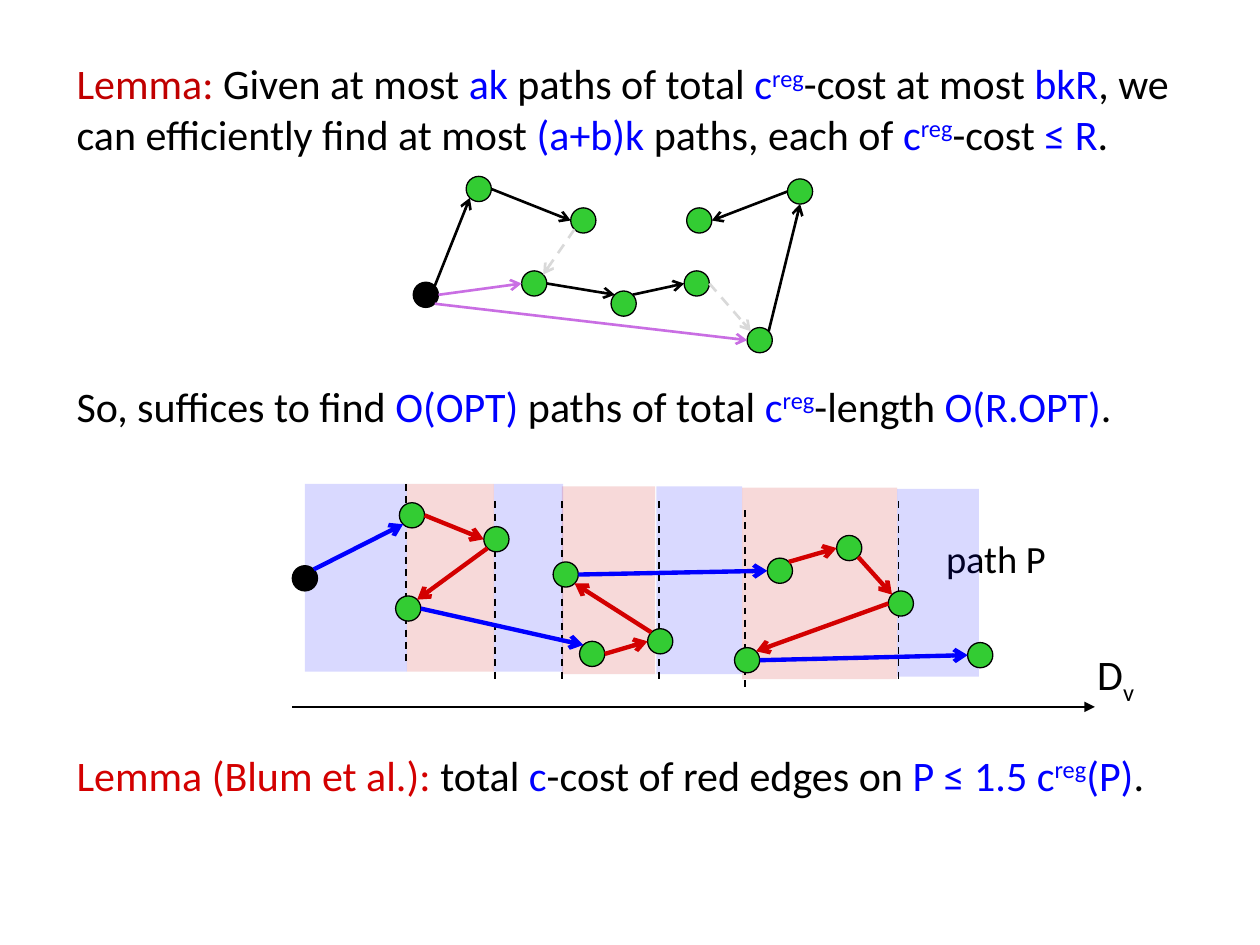
import dataclasses
import math

import lxml.etree
import pptx
import pptx.dml.color
import pptx.enum.dml
import pptx.enum.shapes
import pptx.enum.text
import pptx.oxml.ns
import pptx.util

Inches = pptx.util.Inches


@dataclasses.dataclass(frozen=True)
class Theme:
    font: str = "Calibri"
    body: int = 24
    label: int = 22
    black: str = "000000"
    blue: str = "0000FF"
    red: str = "D30000"
    lemma: str = "C00000"
    rose: str = "CC0000"
    green: str = "33CC33"
    gray: str = "D9D9D9"
    violet: str = "C96EE3"
    tint: int = 15
    hair: float = 0.75
    thin: float = 1
    mid: float = 1.5
    thick: float = 2.5
    node: float = 0.2


SITES = {
    "e": 0, "se": 45, "s": 90, "sw": 135,
    "w": 180, "nw": 225, "n": 270, "ne": 315,
}


class Sketch:
    def __init__(self, slide, theme):
        self.slide = slide
        self.theme = theme

    def color(self, code):
        return pptx.dml.color.RGBColor.from_string(code)

    def child(self, parent, tag, **attrs):
        name = pptx.oxml.ns.qn(tag)
        return lxml.etree.SubElement(parent, name, **attrs)

    def text(self, box, runs, size=None, wrap=True):
        frame = self.slide.shapes.add_textbox(*map(Inches, box)).text_frame
        frame.word_wrap = wrap
        frame.auto_size = pptx.enum.text.MSO_AUTO_SIZE.SHAPE_TO_FIT_TEXT
        para = frame.paragraphs[0]
        para.font.name = self.theme.font
        para.font.size = pptx.util.Pt(size or self.theme.body)
        for words, code, *shift in runs:
            run = para.add_run()
            run.text = words
            run.font.color.rgb = self.color(code)
            if shift:
                run._r.get_or_add_rPr().set("baseline", str(shift[0] * 1000))

    def shape(self, kind, box, code):
        shape = self.slide.shapes.add_shape(kind, *map(Inches, box))
        shape.shadow.inherit = False
        shape.fill.solid()
        shape.fill.fore_color.rgb = self.color(code)
        return shape

    def band(self, box, code):
        kind = pptx.enum.shapes.MSO_SHAPE.RECTANGLE
        shape = self.shape(kind, box, code)
        shape.line.fill.background()
        paint = shape._element.spPr.find(".//" + pptx.oxml.ns.qn("a:srgbClr"))
        self.child(paint, "a:alpha", val=str(self.theme.tint * 1000))

    def node(self, left, top, code):
        size = self.theme.node
        kind = pptx.enum.shapes.MSO_SHAPE.OVAL
        shape = self.shape(kind, (left, top, size, size), code)
        shape.line.color.rgb = self.color(self.theme.black)
        shape.line.width = pptx.util.Pt(self.theme.hair)

    def line(self, start, end, code, width, head=None, dash=False):
        kind = pptx.enum.shapes.MSO_CONNECTOR.STRAIGHT
        line = self.slide.shapes.add_connector(
            kind, *map(Inches, (*start, *end)))
        line.line.color.rgb = self.color(code)
        line.line.width = pptx.util.Pt(width)
        if dash:
            line.line.dash_style = pptx.enum.dml.MSO_LINE.DASH
        if head:
            self.child(line.line._get_or_add_ln(), "a:tailEnd", type=head)
        self.child(line._element.spPr, "a:effectLst")

    def site(self, spot, side):
        half = self.theme.node / 2
        angle = math.radians(SITES[side])
        return (spot[0] + half + half * math.cos(angle),
                spot[1] + half + half * math.sin(angle))

    def graph(self, spots, edges, width):
        for name, spot in spots.items():
            root = name == "a"
            self.node(*spot, self.theme.black if root else self.theme.green)
        for tail, out, tip, into, code in edges:
            self.line(self.site(spots[tail], out), self.site(spots[tip], into),
                      code, width, "arrow", code == self.theme.gray)


def build():
    deck = pptx.Presentation()
    deck.slide_width, deck.slide_height = Inches(10), Inches(7.5)
    theme = Theme()
    black, blue, red = theme.black, theme.blue, theme.red
    gray, violet = theme.gray, theme.violet
    sketch = Sketch(deck.slides.add_slide(deck.slide_layouts[6]), theme)
    cost = [("c", blue), ("reg", blue, 30)]

    sketch.text((0.51, 0.41, 9.21, 0.91), [
        ("Lemma: ", theme.lemma), ("Given at most ", black), ("ak", blue),
        (" paths of total ", black), *cost, ("-cost at most ", black),
        ("bkR", blue), (", we can efficiently find at most ", black),
        ("(a+b)k ", blue), ("paths, each of ", black), *cost,
        ("-cost ", black), ("≤ R", blue), (".", black)])

    sketch.graph({
        "a": (3.28, 2.24), "b": (3.7, 1.4), "c": (4.53, 1.65),
        "d": (4.14, 2.15), "e": (4.85, 2.31), "f": (5.43, 2.15),
        "g": (5.93, 2.6), "h": (6.25, 1.42), "i": (5.45, 1.65),
    }, [
        ("a", "ne", "b", "sw", black), ("b", "e", "c", "w", black),
        ("c", "sw", "d", "ne", gray), ("d", "e", "e", "nw", black),
        ("e", "ne", "f", "w", black), ("f", "e", "g", "nw", gray),
        ("g", "ne", "h", "s", black), ("h", "w", "i", "e", black),
        ("a", "e", "d", "w", violet), ("a", "se", "g", "w", violet),
    ], theme.mid)

    sketch.text((0.51, 2.97, 9, 0.5), [
        ("So, suffices to find ", black), ("O(OPT)", blue),
        (" paths of total ", black), *cost, ("-length ", black),
        ("O(R.OPT)", blue), (".", black)])
    sketch.text((0.51, 5.9, 8.99, 0.5), [
        ("Lemma (Blum et al.):", red), (" total ", black), ("c", blue),
        ("-cost of red edges on ", black), ("P ≤ 1.5 ", blue), *cost,
        ("(P)", blue), (".", black)])

    sketch.line((2.32, 5.61), (8.69, 5.61), black, theme.thin, "triangle")
    sketch.text((8.61, 5.1, 0.69, 0.5),
                [("D", black), ("v", black, -25)], wrap=False)
    sketch.text((7.41, 4.2, 1.01, 0.47),
                [("path P", black)], theme.label, wrap=False)

    bands = [
        (2.42, 3.84, 0.81, 1.49), (3.23, 3.84, 0.69, 1.49),
        (3.92, 3.84, 0.55, 1.49), (4.46, 3.86, 0.74, 1.49),
        (5.21, 3.86, 0.68, 1.49), (5.89, 3.87, 1.23, 1.52),
        (7.12, 3.88, 0.65, 1.49),
    ]
    for rank, box in enumerate(bands):
        sketch.band(box, theme.rose if rank % 2 else blue)
    for left, top in [(3.22, 3.84), (3.93, 3.98), (4.46, 3.98),
                      (5.23, 3.98), (5.91, 4.05), (7.13, 3.98)]:
        sketch.line((left, top), (left, top + 1.43), black, theme.thin,
                    dash=True)

    sketch.graph({
        "a": (2.32, 4.49), "b": (3.17, 3.99), "c": (3.84, 4.18),
        "d": (3.14, 4.73), "e": (4.6, 5.09), "f": (5.14, 4.99),
        "g": (4.39, 4.46), "h": (6.09, 4.43), "i": (6.64, 4.25),
        "j": (7.05, 4.69), "k": (5.83, 5.14), "l": (7.68, 5.1),
    }, [
        ("a", "ne", "b", "sw", blue), ("b", "e", "c", "w", red),
        ("c", "sw", "d", "ne", red), ("d", "e", "e", "nw", blue),
        ("e", "e", "f", "w", red), ("f", "nw", "g", "se", red),
        ("g", "e", "h", "w", blue), ("h", "ne", "i", "w", red),
        ("i", "se", "j", "nw", red), ("j", "w", "k", "ne", red),
        ("k", "e", "l", "w", blue),
    ], theme.thick)

    deck.save("out.pptx")


if __name__ == "__main__":
    build()
